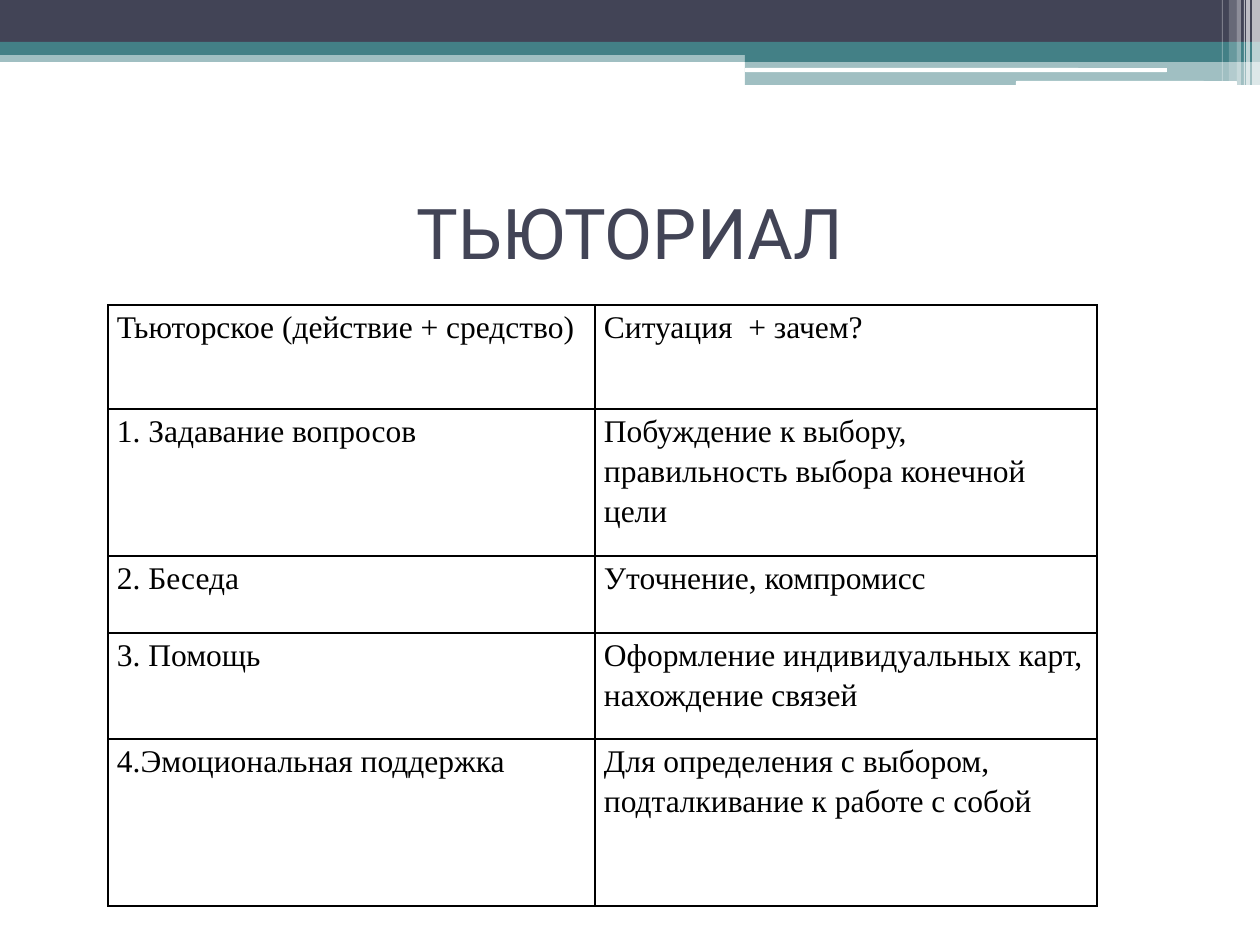
from lxml import etree
from pptx import Presentation
from pptx.dml.color import RGBColor
from pptx.enum.shapes import MSO_SHAPE
from pptx.enum.text import MSO_ANCHOR, PP_ALIGN
from pptx.oxml.ns import qn
from pptx.util import Pt

RECT, ROUND = MSO_SHAPE.RECTANGLE, MSO_SHAPE.ROUNDED_RECTANGLE
MIDDLE, CENTER = MSO_ANCHOR.MIDDLE, PP_ALIGN.CENTER
PX = 914400 / 126
COLORS = {"navy": "424456", "teal": "438086", "white": "FFFFFF", "black": "000000"}


def px(n):
    return round(n * PX)


def add_run(p, text, font, size, color):
    r = p.add_run()
    r.text = text
    r.font.name = font
    r.font.size = Pt(size)
    r.font.color.rgb = RGBColor.from_string(COLORS[color])


prs = Presentation()
prs.slide_width, prs.slide_height = px(1260), px(945)
s = prs.slides.add_slide(prs.slide_layouts[6])

# Header bands and stripes: shape, left, top, width, height, colour, opacity in %
bands = [
    (RECT, 0, 50, 1260, 12, "teal", 50),
    (RECT, 0, 0, 1260, 43, "navy", 100),
    (RECT, 0, 42, 1260, 13, "teal", 100),
    (RECT, 745, 49, 515, 13, "teal", 100),
    (RECT, 745, 61, 515, 24, "teal", 50),
    (ROUND, 745, 68, 422, 4, "white", 100),
    (ROUND, 1016, 81, 221, 5, "white", 100),
    (RECT, 1252, 0, 8, 86, "white", 65),
    (RECT, 1246, 0, 4, 86, "white", 65),
    (RECT, 1244, 0, 1, 86, "white", 60),
    (RECT, 1237, 0, 4, 86, "white", 40),
    (RECT, 1229, 0, 8, 81, "white", 20),
    (RECT, 1222, 0, 1, 81, "white", 30),
]
for kind, x, y, w, h, color, opacity in bands:
    sp = s.shapes.add_shape(kind, px(x), px(y), px(w), px(h))
    sp.shadow.inherit = False
    sp.line.fill.background()
    sp.fill.solid()
    sp.fill.fore_color.rgb = RGBColor.from_string(COLORS[color])
    if opacity < 100:
        clr = sp._element.spPr.find(".//" + qn("a:srgbClr"))
        etree.SubElement(clr, qn("a:alpha"), val=str(opacity * 1000))

# Title
tf = s.shapes.add_textbox(px(63), px(158), px(1134), px(147)).text_frame
tf.word_wrap = True
tf.vertical_anchor = MIDDLE
p = tf.paragraphs[0]
p.alignment = CENTER
add_run(p, "ТЬЮТОРИАЛ", "Roboto", 40, "navy")

# Table of tutor actions and situations
rows = [
    (104, "Тьюторское (действие + средство)", "Ситуация  + зачем?"),
    (147, "1. Задавание вопросов", "Побуждение к выбору, правильность выбора конечной цели"),
    (77, "2. Беседа", "Уточнение, компромисс"),
    (106, "3. Помощь", "Оформление индивидуальных карт, нахождение связей"),
    (167, "4.Эмоциональная поддержка", "Для определения с выбором, подталкивание к работе с собой"),
]
widths = (487, 502)
height = sum(row[0] for row in rows)
table = s.shapes.add_table(len(rows), 2, px(108), px(305), px(sum(widths)), px(height)).table
table.first_row = table.horz_banding = False
for col, w in zip(table.columns, widths):
    col.width = px(w)

for i, (h, *texts) in enumerate(rows):
    table.rows[i].height = px(h)
    for j, text in enumerate(texts):
        cell = table.cell(i, j)
        cell.margin_left = cell.margin_right = px(9)
        cell.margin_top = cell.margin_bottom = 0
        p = cell.text_frame.paragraphs[0]
        p.line_spacing = 1.15
        add_run(p, text, "Times New Roman", 18, "black")
        # Borders come before the fill in the cell properties
        tcPr = cell._tc.get_or_add_tcPr()
        for side in ("lnL", "lnR", "lnT", "lnB"):
            ln = etree.SubElement(tcPr, qn("a:" + side), w=str(Pt(1)))
            fill = etree.SubElement(ln, qn("a:solidFill"))
            etree.SubElement(fill, qn("a:srgbClr"), val=COLORS["black"])
        cell.fill.background()

prs.save("out.pptx")
